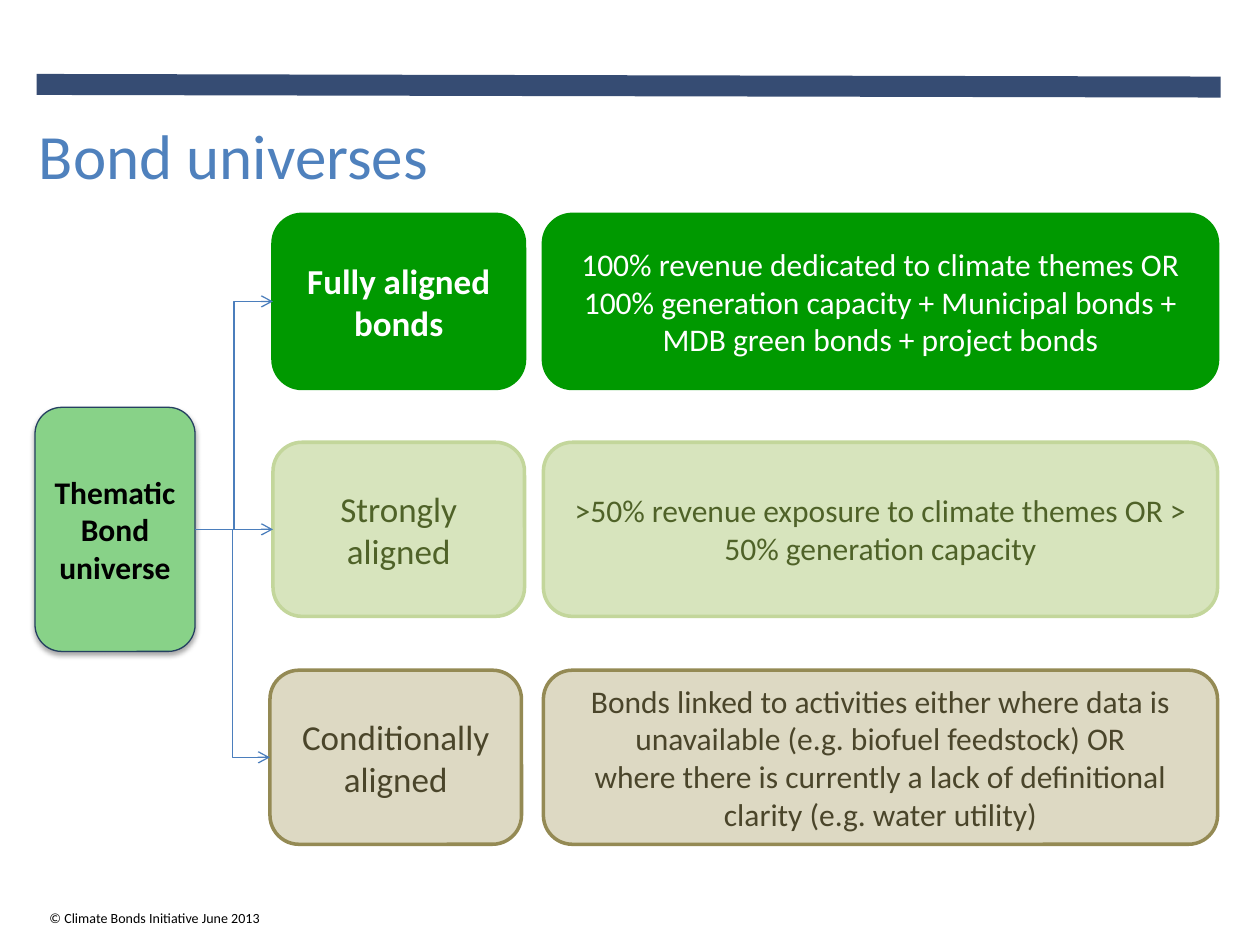
import dataclasses

import lxml.etree
import pptx
import pptx.dml.color
import pptx.enum.shapes
import pptx.enum.text
import pptx.oxml.ns
import pptx.util

Pt = pptx.util.Pt
ALIGN = pptx.enum.text.PP_ALIGN
ANCHOR = pptx.enum.text.MSO_ANCHOR
CONNECTOR = pptx.enum.shapes.MSO_CONNECTOR
ROUNDED = pptx.enum.shapes.MSO_SHAPE.ROUNDED_RECTANGLE
LEFT, RIGHT = 1, 3
NORMAL, SLIM, NONE = (7.2, 3.6, 7.2, 3.6), (2.9, 0, 2.9, 0), (0, 0, 0, 0)


@dataclasses.dataclass(frozen=True)
class Palette:
    fill: str
    line: str
    text: str


@dataclasses.dataclass(frozen=True)
class Theme:
    font: str = "Calibri"
    title_size: float = 36
    level_size: float = 20
    body_size: float = 18
    footer_size: float = 8
    title: str = "4F81BD"
    bar: str = "364C73"
    arrow: str = "4B7EBC"
    black: str = "000000"
    universe: Palette = Palette("88D288", "254061", "000000")
    full: Palette = Palette("009900", "009900", "FFFFFF")
    strong: Palette = Palette("D7E4BD", "C3D69B", "4F6228")
    conditional: Palette = Palette("DDD9C3", "948A54", "4A452A")


def rgb(value):
    return pptx.dml.color.RGBColor.from_string(value)


def add_element(parent, tag, **attributes):
    return lxml.etree.SubElement(parent, pptx.oxml.ns.qn(tag), attributes)


class SlideBuilder:
    def __init__(self, theme, page):
        self.theme = theme
        self.page = page

    def add_text(self, box, paragraphs, size, color, bold=False,
                 align=ALIGN.LEFT, anchor=ANCHOR.MIDDLE, insets=NORMAL):
        frame = box.text_frame
        frame.word_wrap = True
        frame.auto_size = pptx.enum.text.MSO_AUTO_SIZE.NONE
        frame.vertical_anchor = anchor
        (frame.margin_left, frame.margin_top,
         frame.margin_right, frame.margin_bottom) = map(Pt, insets)
        for index, text in enumerate(paragraphs):
            para = frame.add_paragraph() if index else frame.paragraphs[0]
            para.alignment = align
            span = para.add_run()
            span.text = text
            span.font.name = self.theme.font
            span.font.size = Pt(size)
            span.font.bold = bold
            span.font.color.rgb = rgb(color)

    def title(self, text, left, top, width, height):
        box = self.page.shapes.title
        box.left, box.top, box.width, box.height = map(Pt, (left, top, width, height))
        self.add_text(box, [text], self.theme.title_size, self.theme.title)

    def footer(self, text, left, top, width, height):
        box = self.page.shapes.add_textbox(*map(Pt, (left, top, width, height)))
        self.add_text(box, [text], self.theme.footer_size, self.theme.black,
                      anchor=ANCHOR.TOP, insets=(5.75, 3.6, 7.2, 3.6))

    def card(self, paragraphs, left, top, width, height, palette, size,
             bold=False, line_width=2, insets=NORMAL):
        box = self.page.shapes.add_shape(ROUNDED, *map(Pt, (left, top, width, height)))
        box.shadow.inherit = False
        box.fill.solid()
        box.fill.fore_color.rgb = rgb(palette.fill)
        box.line.color.rgb = rgb(palette.line)
        box.line.width = Pt(line_width)
        self.add_text(box, paragraphs, size, palette.text, bold, ALIGN.CENTER, insets=insets)
        return box

    def soft_shadow(self, box):
        effects = box.element.spPr.find(pptx.oxml.ns.qn("a:effectLst"))
        shadow = add_element(effects, "a:outerShdw", blurRad=str(Pt(3.1)),
                             dist=str(Pt(1.8)), dir="5400000", rotWithShape="0")
        color = add_element(shadow, "a:srgbClr", val=self.theme.black)
        add_element(color, "a:alpha", val="35000")

    def line(self, kind, start, end, color, width):
        connector = self.page.shapes.add_connector(kind, *map(Pt, (*start, *end)))
        connector.line.color.rgb = rgb(color)
        connector.line.width = Pt(width)
        add_element(connector.element.spPr, "a:effectLst")
        return connector

    def arrow(self, source, target, kind):
        connector = self.line(kind, (0, 0), (0, 0), self.theme.arrow, 0.75)
        connector.begin_connect(source, RIGHT)
        connector.end_connect(target, LEFT)
        outline = connector.element.spPr.find(pptx.oxml.ns.qn("a:ln"))
        add_element(outline, "a:tailEnd", type="arrow")


def main():
    theme = Theme()
    deck = pptx.Presentation()
    deck.slide_width, deck.slide_height = Pt(720), Pt(540)
    builder = SlideBuilder(theme, deck.slides.add_slide(deck.slide_layouts[5]))

    builder.line(CONNECTOR.STRAIGHT, (21, 48.25), (697.5, 49.75), theme.bar, 12)
    builder.footer("© Climate Bonds Initiative June 2013", 22.5, 516, 265.5, 17.5)
    builder.title("Bond universes", 15, 49.75, 675.5, 76.5)

    universe = builder.card(["Thematic Bond universe"], 20, 232.75, 91.5, 139.5,
                            theme.universe, theme.body_size, bold=True,
                            line_width=0.75, insets=NONE)
    builder.soft_shadow(universe)

    levels = [
        ("Fully aligned bonds", 156, theme.full, True, NORMAL, NONE, CONNECTOR.ELBOW,
         ["100% revenue dedicated to climate themes OR 100% generation capacity "
          "+ Municipal bonds + MDB green bonds + project bonds"]),
        ("Strongly aligned", 156, theme.strong, False, NORMAL, NORMAL, CONNECTOR.STRAIGHT,
         [">50% revenue exposure to climate themes OR > 50% generation capacity"]),
        ("Conditionally aligned", 154.25, theme.conditional, False, SLIM, NORMAL,
         CONNECTOR.ELBOW,
         ["Bonds linked to activities either where data is unavailable "
          "(e.g. biofuel feedstock) OR",
          "where there is currently a lack of definitional clarity (e.g. water utility)"]),
    ]
    first_top, pitch, height = 122.5, 130.25, 99.5
    for row, (name, left, palette, bold, name_insets, rule_insets, kind, rule) in enumerate(levels):
        top = first_top + row * pitch
        level = builder.card([name], left, top, 143.75, height, palette,
                             theme.level_size, bold=bold, insets=name_insets)
        builder.card(rule, 310.5, top, 385.25, height, palette,
                     theme.body_size, insets=rule_insets)
        builder.arrow(universe, level, kind)

    deck.save("out.pptx")


if __name__ == "__main__":
    main()
